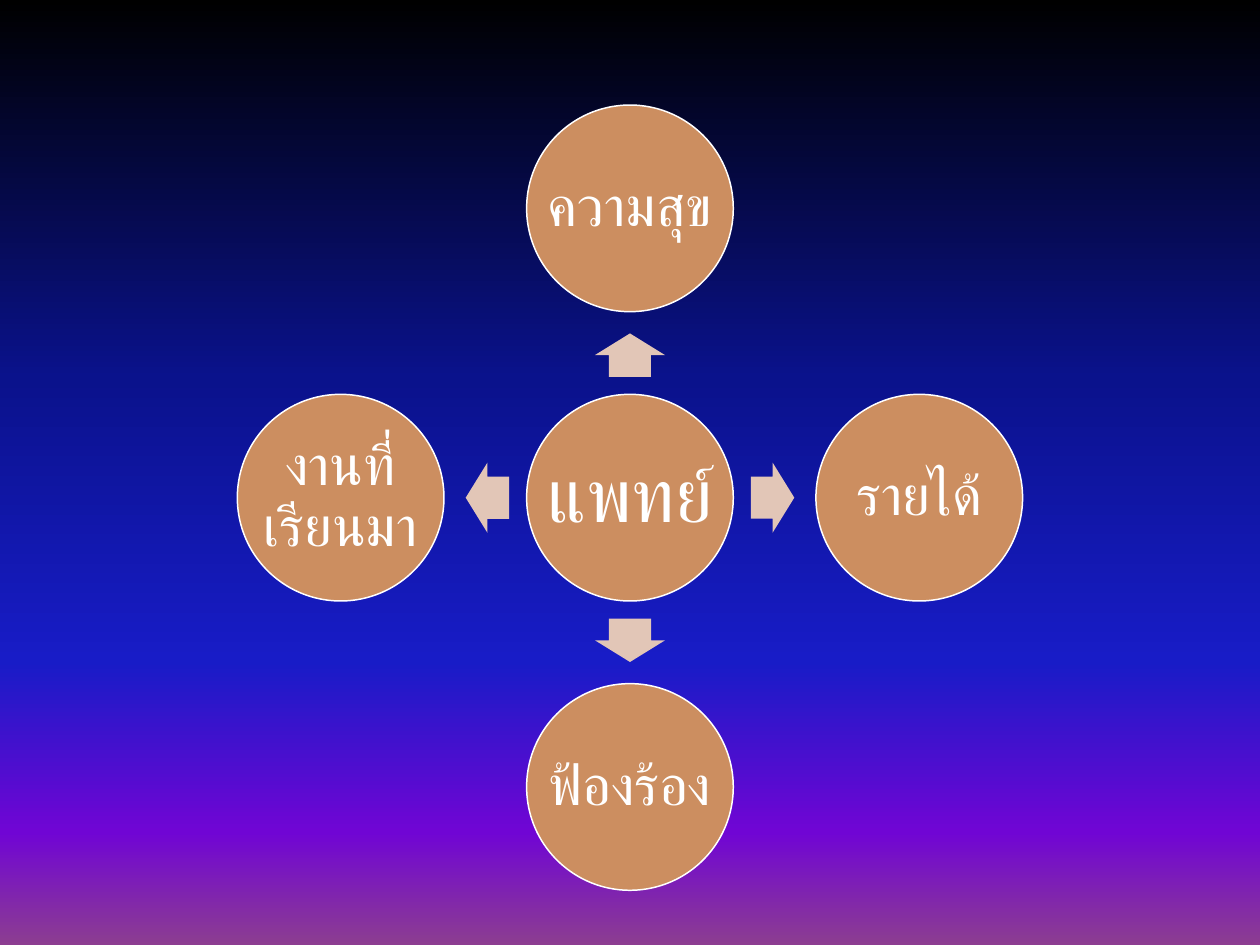
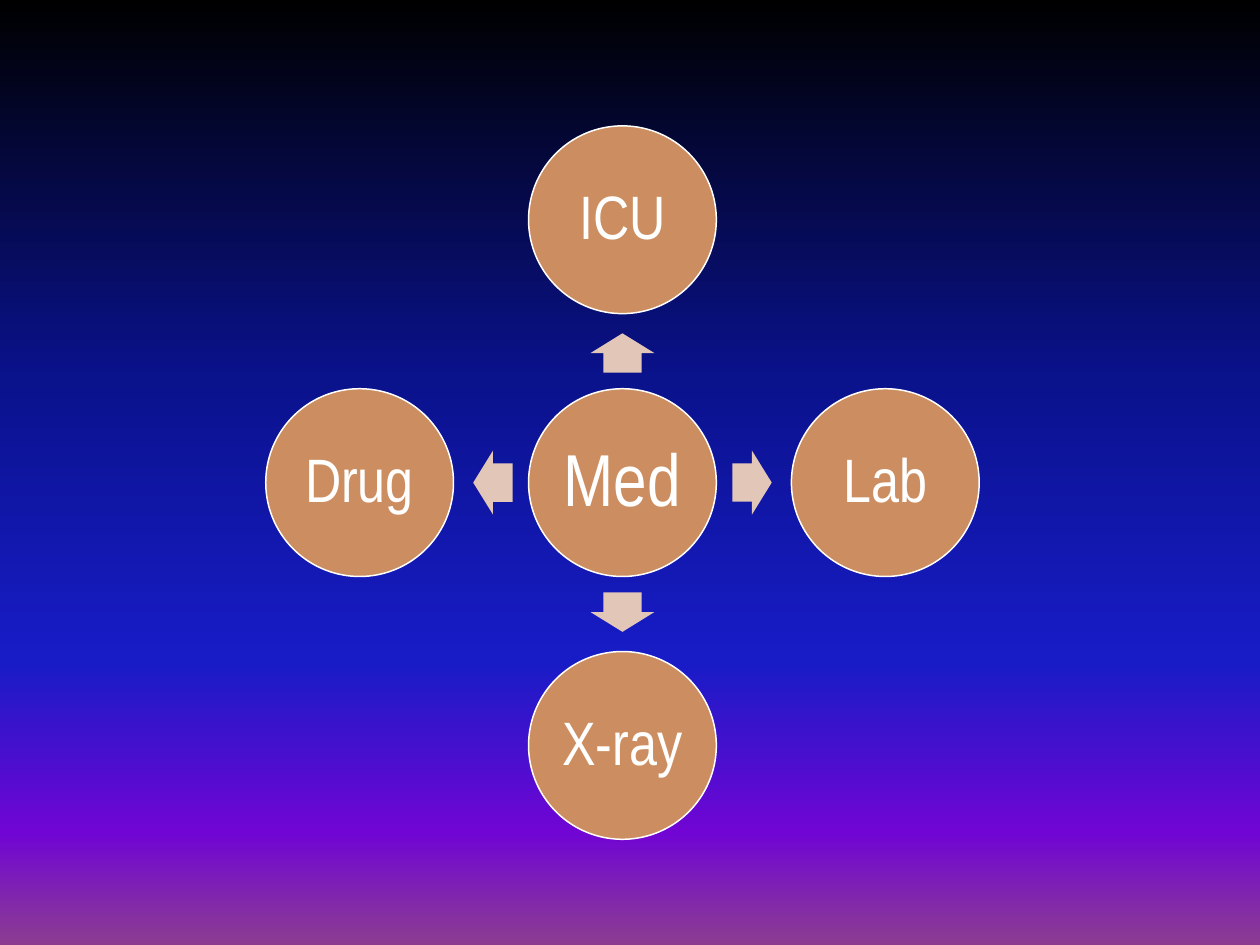
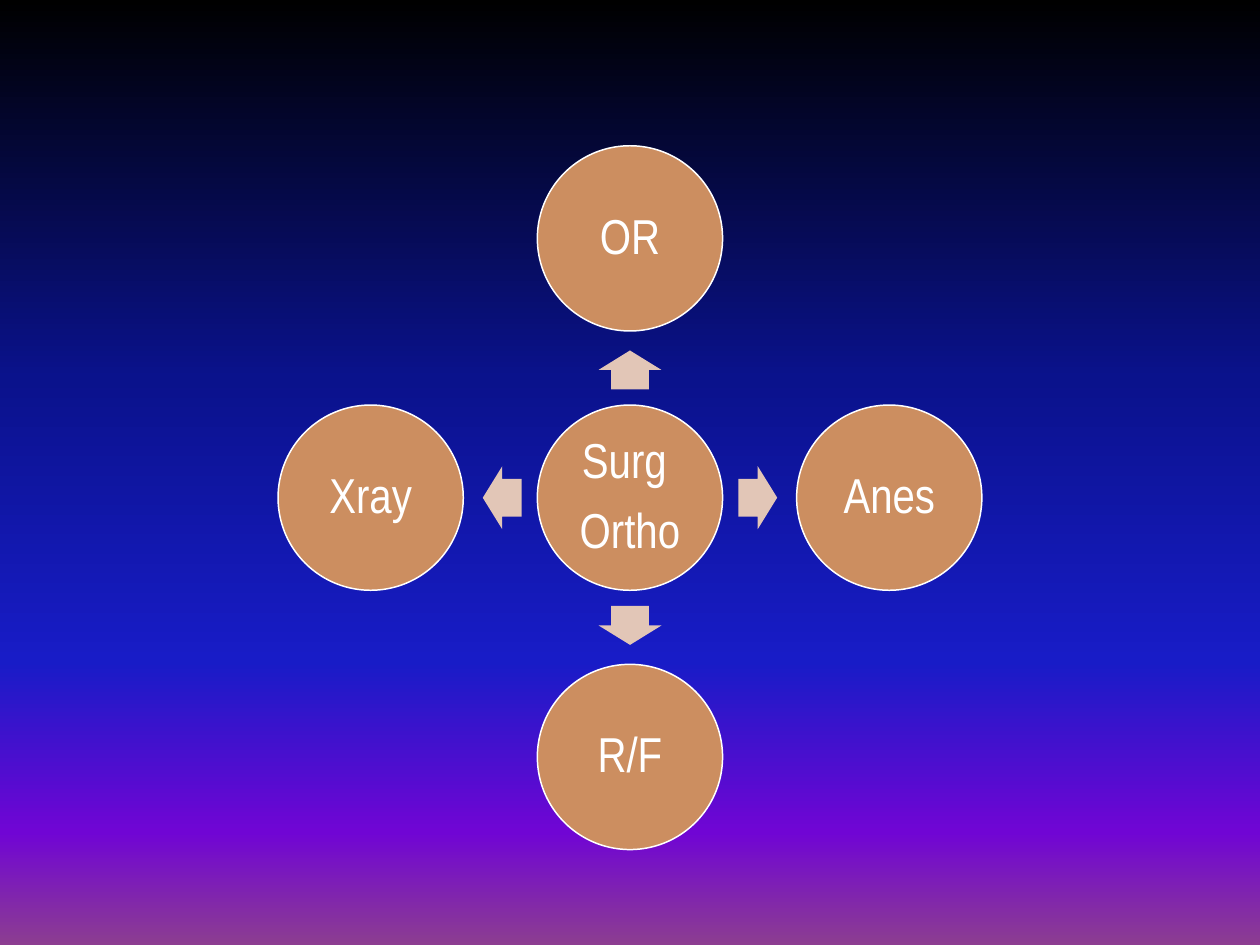
"""Build three hub-and-spoke slides about the work of doctors."""
from lxml import etree
from pptx import Presentation
from pptx.dml.color import RGBColor
from pptx.enum.shapes import MSO_SHAPE as SHAPE
from pptx.enum.text import MSO_ANCHOR as ANCHOR, PP_ALIGN as ALIGN
from pptx.oxml.ns import qn
from pptx.util import Inches, Pt

COLORS = {"circle": "CC8E60", "arrow": "E2C6B7", "white": "FFFFFF"}
BACKDROP = {0: "000000", 40: "0A128C", 70: "181CC7", 88: "7005D4", 100: "8C3D91"}
FONT = "Arial Narrow"
DIRECTIONS = [(0, -1, 270), (1, 0, 0), (0, 1, 90), (-1, 0, 180)]
SPOKE, ARROW_OFFSET = 1.4, 0.69
ARROW_LENGTH, ARROW_WIDTH = 0.21, 0.34

DIAGRAMS = [
    {"center": (5, 3.95), "diameter": 1.64, "hub": "แพทย์", "hub_size": 43, "size": 32,
     "spokes": ["ความสุข", "รายได้", "ฟ้องร้อง", "งานที่\vเรียนมา"]},
    {"center": (4.94, 3.83), "diameter": 1.49, "hub": "Med", "hub_size": 42, "size": 35,
     "spokes": ["ICU", "Lab", "X-ray", "Drug"]},
    {"center": (5, 3.95), "diameter": 1.47, "hub": "Surg \nOrtho", "hub_size": 28, "size": 28,
     "spokes": ["OR", "Anes", "R/F", "Xray"]},
]


def add_centered(slide, kind, x, y, width, height, color):
    part = slide.shapes.add_shape(kind, Inches(x - width / 2), Inches(y - height / 2),
                                  Inches(width), Inches(height))
    part.shadow.inherit = False
    part.fill.solid()
    part.fill.fore_color.rgb = RGBColor.from_string(COLORS[color])
    part.line.fill.background()
    return part


def add_circle(slide, x, y, diameter, label, size):
    circle = add_centered(slide, SHAPE.OVAL, x, y, diameter, diameter, "circle")
    circle.line.color.rgb = RGBColor.from_string(COLORS["white"])
    circle.line.width = Pt(0.85)
    frame = circle.text_frame
    frame.margin_left = frame.margin_right = Inches(0.04)
    frame.margin_top = frame.margin_bottom = Inches(0.04)
    frame.vertical_anchor = ANCHOR.MIDDLE
    frame.word_wrap = False
    frame.text = label
    for paragraph in frame.paragraphs:
        paragraph.alignment = ALIGN.CENTER
        paragraph.line_spacing = 0.9
        paragraph.space_after = Pt(0.35 * size)
        paragraph.font.name = FONT
        paragraph.font.size = Pt(size)
        paragraph.font.color.rgb = RGBColor.from_string(COLORS["white"])


prs = Presentation()
prs.slide_width, prs.slide_height = Inches(10), Inches(7.5)

backdrop = prs.slide_master.background.fill
backdrop.gradient()
backdrop.gradient_angle = 270
stops = prs.slide_master.element.find(".//" + qn("a:gsLst"))
for stop in list(stops):
    stops.remove(stop)
for percent, color in BACKDROP.items():
    stop = etree.SubElement(stops, qn("a:gs"), pos=str(percent * 1000))
    etree.SubElement(stop, qn("a:srgbClr"), val=color)

for diagram in DIAGRAMS:
    slide = prs.slides.add_slide(prs.slide_layouts[6])
    x, y = diagram["center"]
    diameter = diagram["diameter"]
    add_circle(slide, x, y, diameter, diagram["hub"], diagram["hub_size"])
    for label, (dx, dy, angle) in zip(diagram["spokes"], DIRECTIONS):
        offset = ARROW_OFFSET * diameter
        arrow = add_centered(slide, SHAPE.RIGHT_ARROW, x + dx * offset, y + dy * offset,
                             ARROW_LENGTH * diameter, ARROW_WIDTH * diameter, "arrow")
        arrow.adjustments[0], arrow.adjustments[1] = 0.6, 0.5
        arrow.rotation = angle
        reach = SPOKE * diameter
        add_circle(slide, x + dx * reach, y + dy * reach, diameter, label, diagram["size"])

prs.save("out.pptx")
